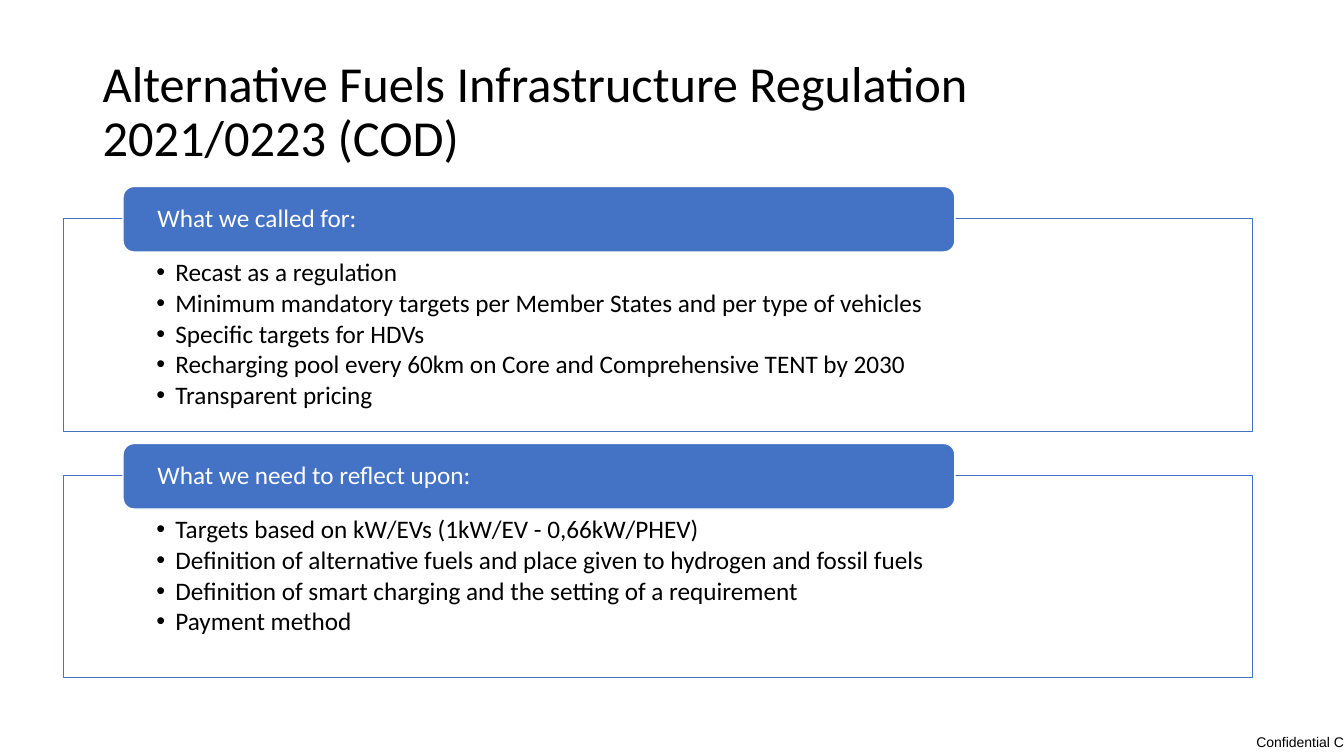
from dataclasses import dataclass

from lxml.etree import SubElement
from pptx import Presentation
from pptx.dml.color import RGBColor as Rgb
from pptx.enum.shapes import MSO_SHAPE as Kind
from pptx.enum.text import MSO_ANCHOR as Anchor, MSO_AUTO_SIZE as Fit, PP_ALIGN as Align
from pptx.oxml.ns import qn
from pptx.util import Inches, Pt

COLORS = {"blue": "4472C4", "white": "FFFFFF", "black": "000000"}
LEFT, WIDTH = 0.63, 11.79
TAB_LEFT, TAB_WIDTH, TAB_HIGH, TAB_RISE = 1.22, 8.25, 0.65, 0.32


@dataclass
class Panel:
    top: float
    height: float
    head: str
    items: list[str]


PANELS = [
    Panel(2.17, 2.11, "What we called for:", [
        "Recast as a regulation",
        "Minimum mandatory targets per Member States and per type of vehicles",
        "Specific targets for HDVs",
        "Recharging pool every 60km on Core and Comprehensive TENT by 2030",
        "Transparent pricing",
    ]),
    Panel(4.72, 2, "What we need to reflect upon:", [
        "Targets based on kW/EVs (1kW/EV - 0,66kW/PHEV)",
        "Definition of alternative fuels and place given to hydrogen and fossil fuels",
        "Definition of smart charging and the setting of a requirement",
        "Payment method",
    ]),
]


def color(name: str) -> Rgb:
    return Rgb.from_string(COLORS[name])


def style(para, size: float, ink: str, face: str = "Calibri", align=Align.LEFT) -> None:
    para.alignment = align
    para.font.size = Pt(size)
    para.font.name = face
    para.font.color.rgb = color(ink)


def inset(frame, left: float, top: float, right: float, low: float) -> None:
    frame.margin_left, frame.margin_top = Inches(left), Inches(top)
    frame.margin_right, frame.margin_bottom = Inches(right), Inches(low)


def bullet(para) -> None:
    props = para._p.get_or_add_pPr()
    props.set("marL", str(Inches(0.19)))
    props.set("indent", str(-Inches(0.19)))
    SubElement(props, qn("a:buFont")).set("typeface", "Arial")
    SubElement(props, qn("a:buChar")).set("char", "•")


def add_box(slide, kind, at: tuple, fill: str, line: str):
    box = slide.shapes.add_shape(kind, *map(Inches, at))
    box.shadow.inherit = False
    box.fill.solid()
    box.fill.fore_color.rgb = color(fill)
    box.line.color.rgb = color(line)
    box.line.width = Pt(1)
    box.text_frame.word_wrap = True
    return box


def add_panel(slide, panel: Panel) -> None:
    # Outlined body with its list
    at = (LEFT, panel.top, WIDTH, panel.height)
    body = add_box(slide, Kind.RECTANGLE, at, "white", "blue")
    tint = body.fill._xPr.find(qn("a:solidFill"))[0]
    SubElement(tint, qn("a:alpha")).set("val", "90000")
    frame = body.text_frame
    frame.vertical_anchor = Anchor.TOP
    inset(frame, 0.92, 0.41, 0.92, 0.14)
    frame.text = "\n".join(panel.items)
    for para in frame.paragraphs:
        style(para, 18, "black")
        para.line_spacing = 0.9
        para.space_after = Pt(2.4)
        bullet(para)

    # Heading tab across the top edge
    at = (TAB_LEFT, panel.top - TAB_RISE, TAB_WIDTH, TAB_HIGH)
    frame = add_box(slide, Kind.ROUNDED_RECTANGLE, at, "blue", "white").text_frame
    frame.vertical_anchor = Anchor.MIDDLE
    inset(frame, 0.31, 0, 0.31, 0)
    frame.text = panel.head
    style(frame.paragraphs[0], 18, "white")
    frame.paragraphs[0].line_spacing = 0.9


def add_label(slide, at: tuple, text: str):
    frame = slide.shapes.add_textbox(*map(Inches, at)).text_frame
    frame.vertical_anchor = Anchor.MIDDLE
    frame.text = text
    return frame


def main() -> None:
    deck = Presentation()
    deck.slide_width, deck.slide_height = Inches(13.33), Inches(7.5)
    slide = deck.slides.add_slide(deck.slide_layouts[6])

    # Footer mark
    foot = add_label(slide, (12.15, 7.23, 1.18, 0.27), "Confidential C")
    foot.auto_size = Fit.SHAPE_TO_FIT_TEXT
    inset(foot, 0, 0, 0, 0)
    style(foot.paragraphs[0], 10, "black", "Arial", Align.RIGHT)

    # Title
    title = add_label(slide, (0.92, 0.4, 11.5, 1.45),
                      "Alternative Fuels Infrastructure Regulation\v2021/0223 (COD)")
    title.word_wrap = True
    style(title.paragraphs[0], 36, "black")
    title.paragraphs[0].line_spacing = 0.9

    # Panels
    for panel in PANELS:
        add_panel(slide, panel)

    deck.save("out.pptx")


if __name__ == "__main__":
    main()
